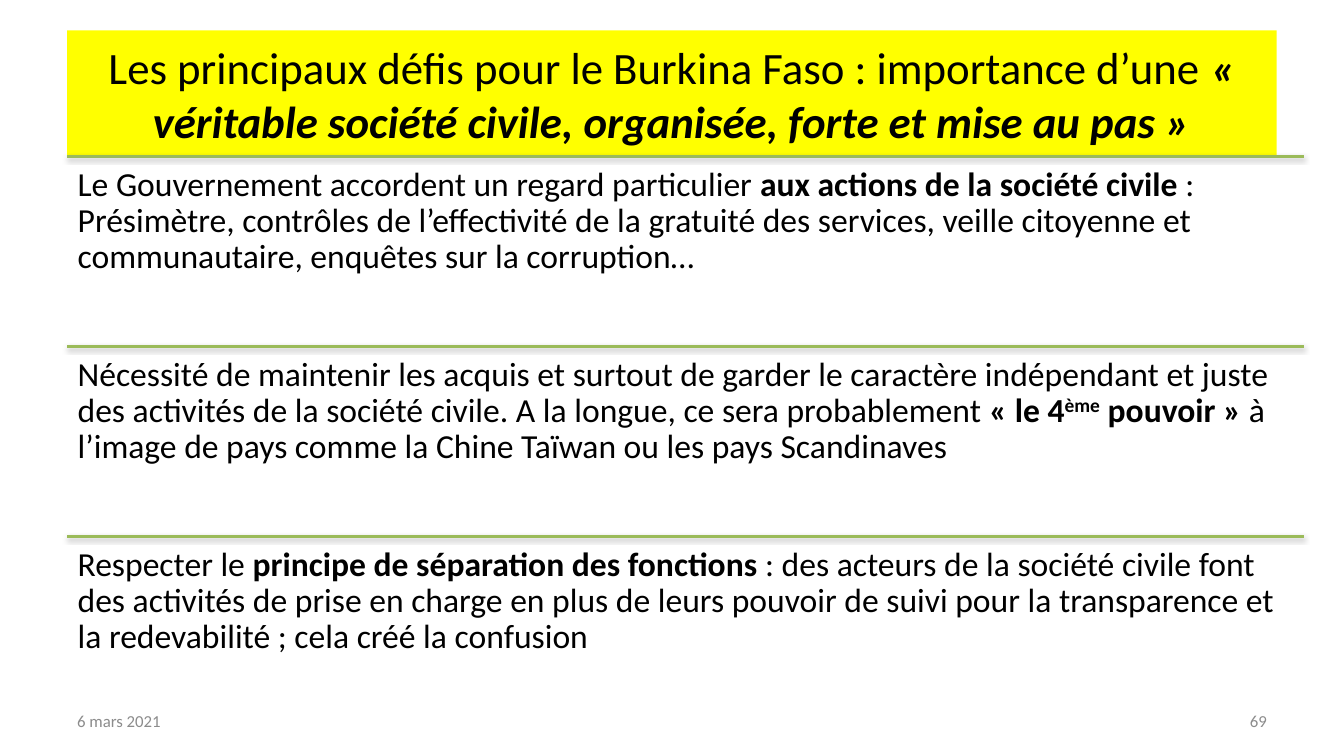
from lxml import etree
from pptx import Presentation
from pptx.dml.color import RGBColor
from pptx.enum.shapes import MSO_CONNECTOR, MSO_SHAPE
from pptx.enum.text import MSO_ANCHOR, PP_ALIGN
from pptx.oxml import parse_xml
from pptx.oxml.ns import nsdecls
from pptx.util import Pt

RECTANGLE = MSO_SHAPE.RECTANGLE
STRAIGHT = MSO_CONNECTOR.STRAIGHT
TOP, MIDDLE = MSO_ANCHOR.TOP, MSO_ANCHOR.MIDDLE
LEFT, CENTER, RIGHT = PP_ALIGN.LEFT, PP_ALIGN.CENTER, PP_ALIGN.RIGHT

YELLOW = RGBColor(0xFF, 0xFF, 0x00)
GREEN = RGBColor(0x9B, 0xBB, 0x59)
BLACK = RGBColor(0x00, 0x00, 0x00)
GREY = RGBColor(0x8C, 0x8C, 0x8C)

PX = 9525
SLIDE_WIDTH, SLIDE_HEIGHT = 1280, 720
FONT = "Calibri"

PLAIN, BOLD, BOLD_ITALIC, BOLD_SUPERSCRIPT = "plain", "bold", "bold italic", "bold superscript"

TITLE = [
    ("Les principaux défis pour le Burkina Faso : importance d’une ", PLAIN),
    ("« véritable société civile, organisée, forte et mise au pas »", BOLD_ITALIC),
]
CHALLENGES = [
    [
        ("Le Gouvernement accordent un regard particulier ", PLAIN),
        ("aux actions de la société civile ", BOLD),
        (": Présimètre, contrôles de l’effectivité de la gratuité des services, "
         "veille citoyenne et communautaire, enquêtes sur la corruption…", PLAIN),
    ],
    [
        ("Nécessité de maintenir les acquis et surtout de garder le caractère "
         "indépendant et juste des activités de la société civile. A la longue, "
         "ce sera probablement ", PLAIN),
        ("« le 4", BOLD),
        ("ème", BOLD_SUPERSCRIPT),
        (" pouvoir » ", BOLD),
        ("à l’image de pays comme la Chine Taïwan ou les pays Scandinaves", PLAIN),
    ],
    [
        ("Respecter le ", PLAIN),
        ("principe de séparation des fonctions ", BOLD),
        (": des acteurs de la société civile font des activités de prise en charge "
         "en plus de leurs pouvoir de suivi pour la transparence et la redevabilité ; "
         "cela créé la confusion", PLAIN),
    ],
]


def px(*lengths):
    return [length * PX for length in lengths]


def write_text(shape, runs, size, color, align=LEFT, anchor=MIDDLE):
    """Fill the shape with one paragraph made of (text, style) runs."""
    frame = shape.text_frame
    frame.word_wrap = True
    frame.vertical_anchor = anchor
    paragraph = frame.paragraphs[0]
    paragraph.alignment = align
    for text, style in runs:
        run = paragraph.add_run()
        run.text = text
        font = run.font
        font.name = FONT
        font.size = Pt(size)
        font.color.rgb = color
        font.bold = "bold" in style
        font.italic = "italic" in style
        if "superscript" in style:
            run._r.get_or_add_rPr().set("baseline", "30000")
    return paragraph


def add_title(slide, left, top, width, height):
    banner = slide.shapes.add_shape(RECTANGLE, *px(left, top, width, height))
    banner.shadow.inherit = False
    banner.fill.solid()
    banner.fill.fore_color.rgb = YELLOW
    banner.line.fill.background()
    write_text(banner, TITLE, 32, BLACK, CENTER)


def add_rule(slide, left, top, width):
    """Draw a horizontal green line with a soft shadow below it."""
    rule = slide.shapes.add_connector(STRAIGHT, *px(left, top, left + width, top))
    rule.line.color.rgb = GREEN
    rule.line.width = Pt(2)
    effects = parse_xml(f"<a:effectLst {nsdecls('a')}/>")
    namespace = effects.nsmap["a"]
    shadow = etree.SubElement(
        effects, f"{{{namespace}}}outerShdw",
        blurRad="40000", dist="20000", dir="5400000", rotWithShape="0")
    color = etree.SubElement(shadow, f"{{{namespace}}}srgbClr", val="000000")
    etree.SubElement(color, f"{{{namespace}}}alpha", val="38000")
    rule._element.spPr.append(effects)


def add_challenges(slide, left, top, width, height):
    """Stack the challenges in equal rows, each under its own rule."""
    row_height = height // len(CHALLENGES)
    for index, runs in enumerate(CHALLENGES):
        row_top = top + index * row_height
        add_rule(slide, left, row_top, width)
        box = slide.shapes.add_textbox(*px(left, row_top, width, row_height))
        frame = box.text_frame
        frame.margin_left, frame.margin_top, frame.margin_right, frame.margin_bottom = px(10, 10, 10, 10)
        paragraph = write_text(box, runs, 24, BLACK, anchor=TOP)
        paragraph.line_spacing = 0.9
        paragraph.space_after = Pt(8.4)


def add_footer(slide, left, top, width, height):
    field_width = 299
    fields = [("6 mars 2021", left, LEFT), ("69", left + width - field_width, RIGHT)]
    for text, field_left, align in fields:
        box = slide.shapes.add_textbox(*px(field_left, top, field_width, height))
        write_text(box, [(text, PLAIN)], 12, GREY, align)


def main():
    presentation = Presentation()
    presentation.slide_width, presentation.slide_height = px(SLIDE_WIDTH, SLIDE_HEIGHT)
    slide = presentation.slides.add_slide(presentation.slide_layouts[6])
    add_title(slide, 64, 29, 1152, 120)
    add_challenges(slide, 64, 149, 1178, 543)
    add_footer(slide, 64, 667, 1152, 38)
    presentation.save("out.pptx")


if __name__ == "__main__":
    main()
